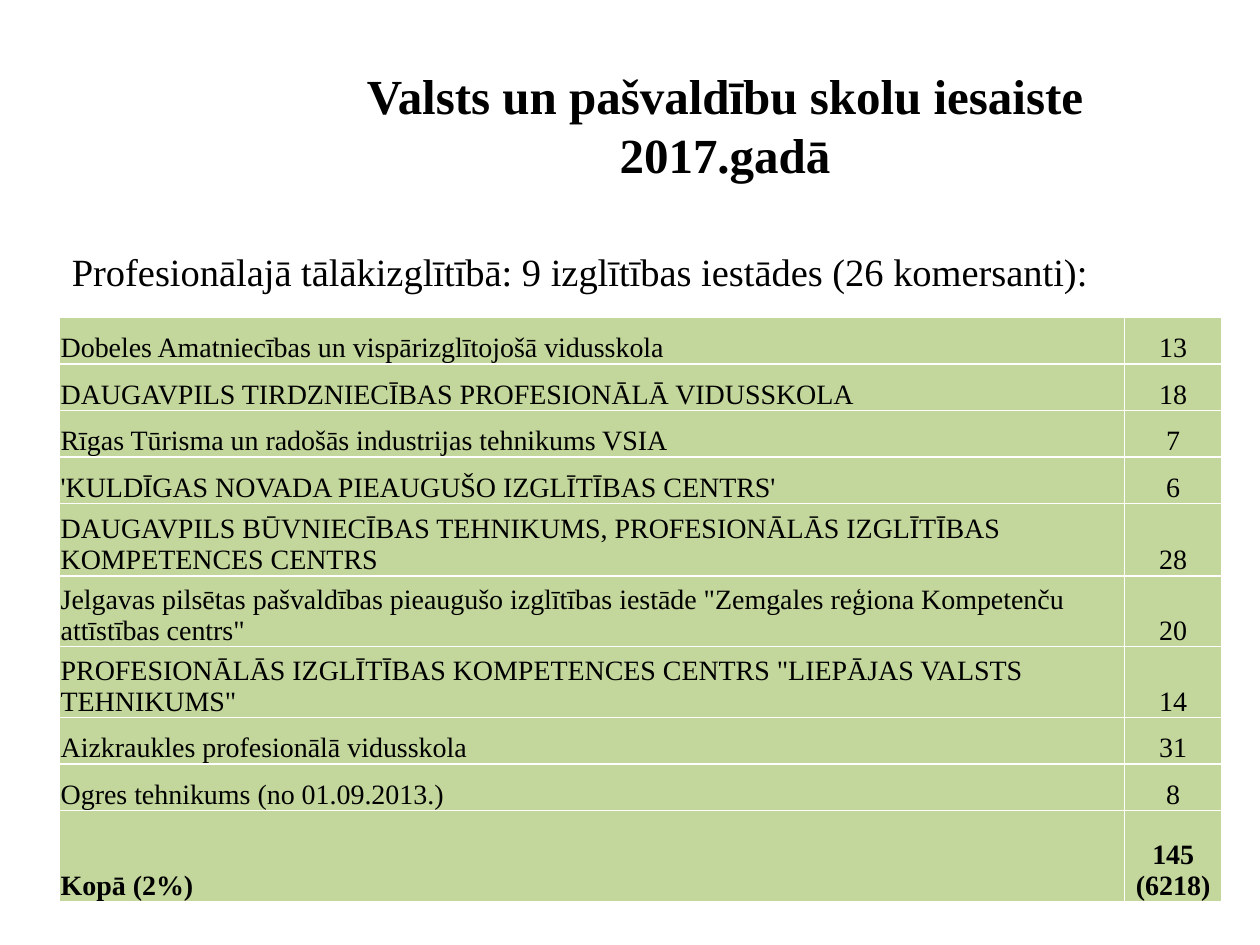
from lxml import etree
from pptx import Presentation
from pptx.dml.color import RGBColor
from pptx.enum.text import MSO_ANCHOR, MSO_AUTO_SIZE, PP_ALIGN
from pptx.oxml.ns import qn
from pptx.util import Pt

LEFT, CENTER = PP_ALIGN.LEFT, PP_ALIGN.CENTER
MIDDLE, TOP, BOTTOM = MSO_ANCHOR.MIDDLE, MSO_ANCHOR.TOP, MSO_ANCHOR.BOTTOM
NO_FIT = MSO_AUTO_SIZE.NONE

COLORS = {"text": "000000", "cell": "C3D69B", "border": "FFFFFF"}

SCHOOLS = [
    ("Dobeles Amatniecības un vispārizglītojošā vidusskola", "13"),
    ("DAUGAVPILS TIRDZNIECĪBAS PROFESIONĀLĀ VIDUSSKOLA", "18"),
    ("Rīgas Tūrisma un radošās industrijas tehnikums VSIA", "7"),
    ("'KULDĪGAS NOVADA PIEAUGUŠO IZGLĪTĪBAS CENTRS'", "6"),
    ("DAUGAVPILS BŪVNIECĪBAS TEHNIKUMS, PROFESIONĀLĀS IZGLĪTĪBAS "
     "KOMPETENCES CENTRS", "28"),
    ("Jelgavas pilsētas pašvaldības pieaugušo izglītības iestāde "
     "\"Zemgales reģiona Kompetenču attīstības centrs\"", "20"),
    ("PROFESIONĀLĀS IZGLĪTĪBAS KOMPETENCES CENTRS "
     "\"LIEPĀJAS VALSTS TEHNIKUMS\"", "14"),
    ("Aizkraukles profesionālā vidusskola", "31"),
    ("Ogres tehnikums (no 01.09.2013.)", "8"),
    ("Kopā (2%)", "145 (6218)"),
]
COL_WIDTHS = [608.6, 55.6]
ROW_HEIGHTS = [26.6] * 4 + [41.4, 40.4, 40.4] + [26.6] * 2 + [52.4]


class SlideBuilder:
    """Holds the text style and the current slide."""

    font_name = "Times New Roman"

    def __init__(self, slide):
        self.slide = slide

    def add_run(self, tf, text, size, bold=False, align=LEFT):
        p = tf.paragraphs[0]
        p.alignment = align
        r = p.add_run()
        r.text = text
        style = {"name": self.font_name, "size": Pt(size), "bold": bold}
        for key, value in style.items():
            setattr(r.font, key, value)
        r.font.color.rgb = RGBColor.from_string(COLORS["text"])

    def place(self, sp, box, anchor):
        for key, value in zip(("left", "top", "width", "height"), box):
            setattr(sp, key, Pt(value))
        frame = {"word_wrap": True, "auto_size": NO_FIT, "vertical_anchor": anchor}
        for key, value in frame.items():
            setattr(sp.text_frame, key, value)

    def title(self, text, box, size):
        sp = self.slide.shapes.title
        self.place(sp, box, MIDDLE)
        self.add_run(sp.text_frame, text, size, bold=True, align=CENTER)

    def text(self, text, box, size):
        sp = self.slide.shapes.add_textbox(*map(Pt, box))
        self.place(sp, box, TOP)
        self.add_run(sp.text_frame, text, size)

    def borders(self, cell):
        tc_pr = cell._tc.get_or_add_tcPr()
        for i, side in enumerate(("lnL", "lnR", "lnT", "lnB")):
            ln = etree.Element(qn(f"a:{side}"), w=str(Pt(1)))
            fill = etree.SubElement(ln, qn("a:solidFill"))
            etree.SubElement(fill, qn("a:srgbClr"), val=COLORS["border"])
            tc_pr.insert(i, ln)

    def table(self, rows, left, top, widths, heights, size):
        frame = self.slide.shapes.add_table(
            len(rows), len(widths), Pt(left), Pt(top),
            Pt(sum(widths)), Pt(sum(heights)))
        table = frame.table
        table.first_row = table.horz_banding = False
        for col, width in zip(table.columns, widths):
            col.width = Pt(width)
        for row, height in zip(table.rows, heights):
            row.height = Pt(height)
        layout = {"margin_left": Pt(0.7), "margin_right": Pt(0.7),
                  "margin_top": Pt(0.7), "margin_bottom": 0,
                  "vertical_anchor": BOTTOM}
        for i, values in enumerate(rows):
            for j, value in enumerate(values):
                cell = table.cell(i, j)
                for key, setting in layout.items():
                    setattr(cell, key, setting)
                cell.fill.solid()
                cell.fill.fore_color.rgb = RGBColor.from_string(COLORS["cell"])
                self.borders(cell)
                self.add_run(cell.text_frame, value, size,
                             bold=i == len(rows) - 1,
                             align=CENTER if j else LEFT)


def main():
    prs = Presentation()
    prs.slide_width, prs.slide_height = Pt(720), Pt(540)
    s = SlideBuilder(prs.slides.add_slide(prs.slide_layouts[5]))

    # Heading and lead-in
    s.title("Valsts un pašvaldību skolu iesaiste 2017.gadā",
            (174.2, 30.2, 480.2, 81.4), 28)
    s.text("Profesionālajā tālākizglītībā: 9 izglītības iestādes (26 komersanti):",
           (34, 138.2, 669.6, 383.8), 22)

    # Schools and participant counts, with the total last
    s.table(SCHOOLS, 34, 181.4, COL_WIDTHS, ROW_HEIGHTS, 16)

    prs.save("out.pptx")


if __name__ == "__main__":
    main()
